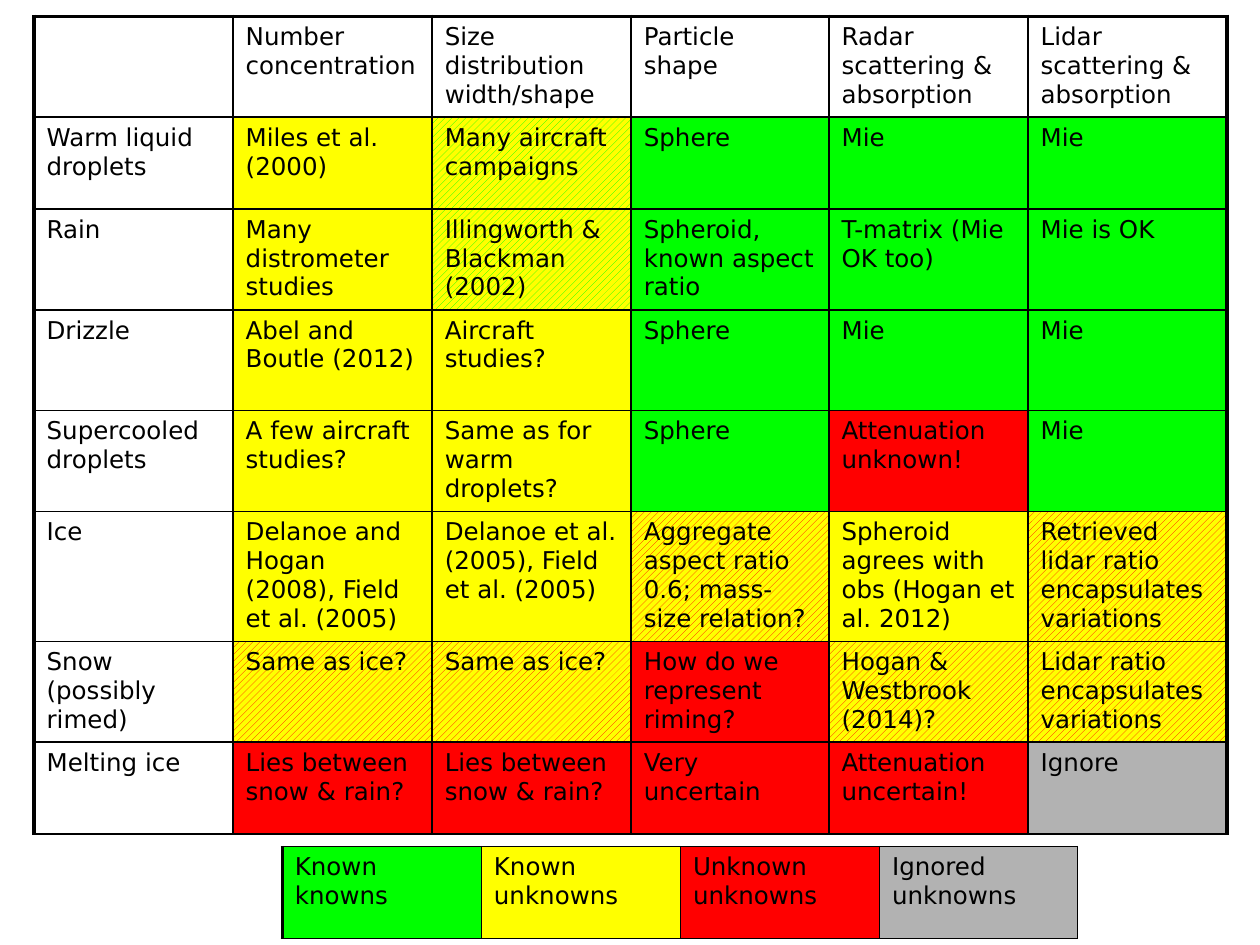
from lxml.etree import SubElement
from pptx import Presentation
from pptx.dml.color import RGBColor
from pptx.enum.dml import MSO_PATTERN_TYPE as Pattern
from pptx.oxml.ns import qn
from pptx.util import Inches, Pt

GREEN, YELLOW, RED, GREY, WHITE = "00FF00", "FFFF00", "FF0000", "B2B2B2", "FFFFFF"
THIN, THICK = 1, 2.25
COLUMN_WIDTHS = [1.58, 1.58, 1.58, 1.57, 1.58, 1.58]
ROW_HEIGHTS = [0.8, 0.73, 0.8, 0.8, 0.8, 1.03, 0.8, 0.73]

# A single colour is a solid fill; a pair is stripes on a background.
FILLS = {
    "known": (GREEN,),
    "mostly known": (GREEN, YELLOW),
    "uncertain": (YELLOW,),
    "mostly unknown": (RED, YELLOW),
    "unknown": (RED,),
    "ignored": (GREY,),
    "heading": (WHITE,),
}

KNOWLEDGE = [
    [("", "heading"), ("Number concentration", "heading"),
     ("Size distribution width/shape", "heading"), ("Particle shape", "heading"),
     ("Radar scattering & absorption", "heading"),
     ("Lidar scattering & absorption", "heading")],
    [("Warm liquid droplets", "heading"), ("Miles et al. (2000)", "uncertain"),
     ("Many aircraft campaigns", "mostly known"), ("Sphere", "known"),
     ("Mie", "known"), ("Mie", "known")],
    [("Rain", "heading"), ("Many distrometer studies", "uncertain"),
     ("Illingworth & Blackman (2002)", "mostly known"),
     ("Spheroid, known aspect ratio", "known"),
     ("T-matrix (Mie OK too)", "known"), ("Mie is OK", "known")],
    [("Drizzle", "heading"), ("Abel and Boutle (2012)", "uncertain"),
     ("Aircraft studies?", "uncertain"), ("Sphere", "known"),
     ("Mie", "known"), ("Mie", "known")],
    [("Supercooled droplets", "heading"), ("A few aircraft studies?", "uncertain"),
     ("Same as for warm droplets?", "uncertain"), ("Sphere", "known"),
     ("Attenuation unknown!", "unknown"), ("Mie", "known")],
    [("Ice", "heading"),
     ("Delanoe and Hogan (2008), Field et al. (2005)", "uncertain"),
     ("Delanoe et al. (2005), Field et al. (2005)", "uncertain"),
     ("Aggregate aspect ratio 0.6; mass-size relation?", "mostly unknown"),
     ("Spheroid agrees with obs (Hogan et al. 2012)", "uncertain"),
     ("Retrieved lidar ratio encapsulates variations", "mostly unknown")],
    [("Snow (possibly rimed)", "heading"), ("Same as ice?", "mostly unknown"),
     ("Same as ice?", "mostly unknown"), ("How do we represent riming?", "unknown"),
     ("Hogan & Westbrook (2014)?", "mostly unknown"),
     ("Lidar ratio encapsulates variations", "mostly unknown")],
    [("Melting ice", "heading"), ("Lies between snow & rain?", "unknown"),
     ("Lies between snow & rain?", "unknown"), ("Very uncertain", "unknown"),
     ("Attenuation uncertain!", "unknown"), ("Ignore", "ignored")],
]
LEGEND = [[("Known knowns", "known"), ("Known unknowns", "uncertain"),
           ("Unknown unknowns", "unknown"), ("Ignored unknowns", "ignored")]]


def color(value):
    return RGBColor.from_string(value)


def write_text(cell, text, size=14, font="DejaVu Sans", ink="000000", space_percent=20):
    para = cell.text_frame.paragraphs[0]
    before = SubElement(para._p.get_or_add_pPr(), qn("a:spcBef"))
    SubElement(before, qn("a:spcPct"), val=str(space_percent * 1000))
    span = para.add_run()
    span.text = text
    span.font.size = Pt(size)
    span.font.name = font
    span.font.color.rgb = color(ink)


def set_borders(cell, left=THIN, right=THIN, top=THIN, bottom=THIN, ink="000000"):
    """Draw the four cell edges; call before the fill, which must follow them."""
    properties = cell._tc.get_or_add_tcPr()
    for side, width in zip("LRTB", (left, right, top, bottom)):
        edge = SubElement(properties, qn(f"a:ln{side}"), w=str(Pt(width)))
        SubElement(SubElement(edge, qn("a:solidFill")), qn("a:srgbClr"), val=ink)


def fill_cell(cell, front, back=None):
    if back is None:
        cell.fill.solid()
        cell.fill.fore_color.rgb = color(front)
    else:
        cell.fill.patterned()
        cell.fill.pattern = Pattern.WIDE_UPWARD_DIAGONAL
        cell.fill.fore_color.rgb = color(front)
        cell.fill.back_color.rgb = color(back)


def add_grid(page, rows, left, top, widths, heights, thick_sides):
    """Add a table whose outer edges named in thick_sides are heavier."""
    table = page.shapes.add_table(
        len(heights), len(widths), Inches(left), Inches(top),
        Inches(sum(widths)), Inches(sum(heights))).table
    table.first_row = table.horz_banding = False
    for column, width in zip(table.columns, widths):
        column.width = Inches(width)
    for row, height in zip(table.rows, heights):
        row.height = Inches(height)
    for r, row in enumerate(rows):
        for c, (text, status) in enumerate(row):
            cell = table.cell(r, c)
            outer = {"left": c == 0, "right": c == len(widths) - 1, "top": r == 0}
            set_borders(cell, **{side: THICK for side in thick_sides if outer[side]})
            fill_cell(cell, *FILLS[status])
            if text:
                write_text(cell, text)


def main():
    deck = Presentation()
    deck.slide_width, deck.slide_height = Inches(10), Inches(7.5)
    page = deck.slides.add_slide(deck.slide_layouts[6])
    add_grid(page, KNOWLEDGE, 0.27, 0.13, COLUMN_WIDTHS, ROW_HEIGHTS,
             ("left", "right", "top"))
    add_grid(page, LEGEND, 2.24, 6.72, COLUMN_WIDTHS[:4], ROW_HEIGHTS[-1:], ("left",))
    deck.save("out.pptx")


if __name__ == "__main__":
    main()
